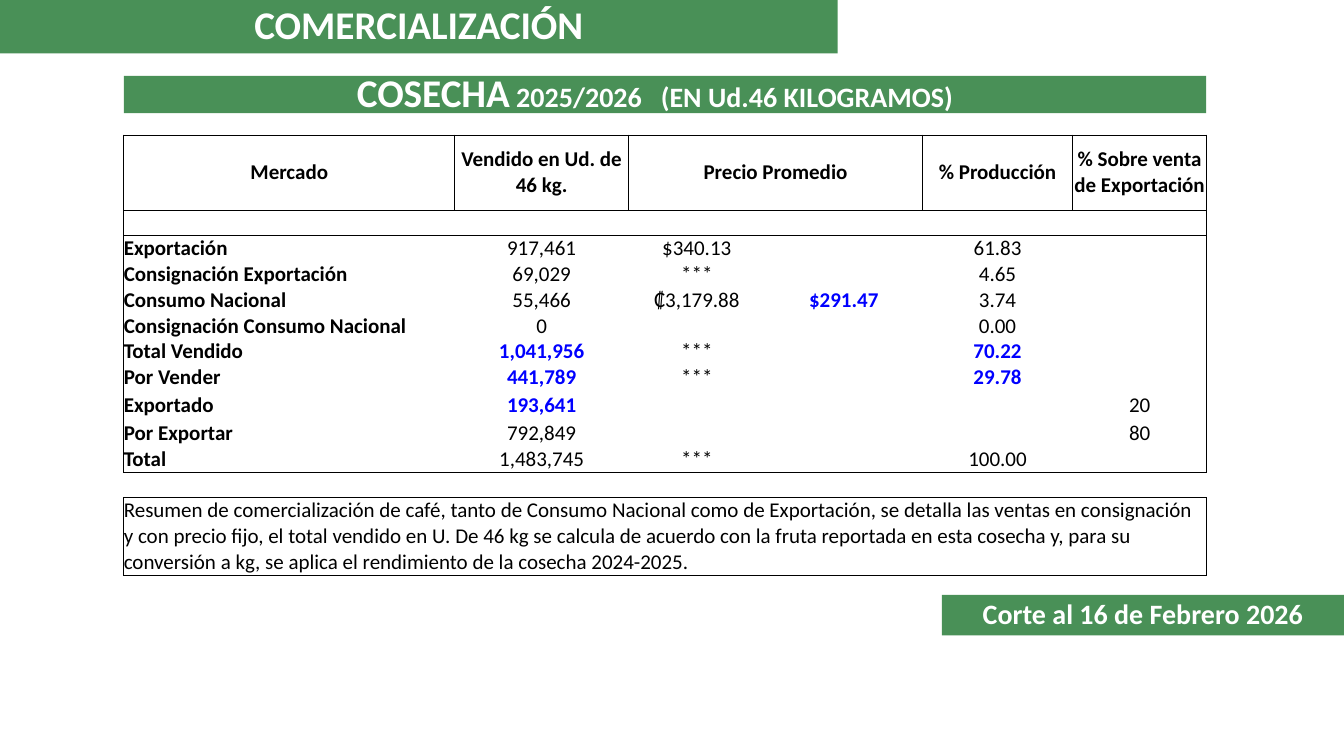
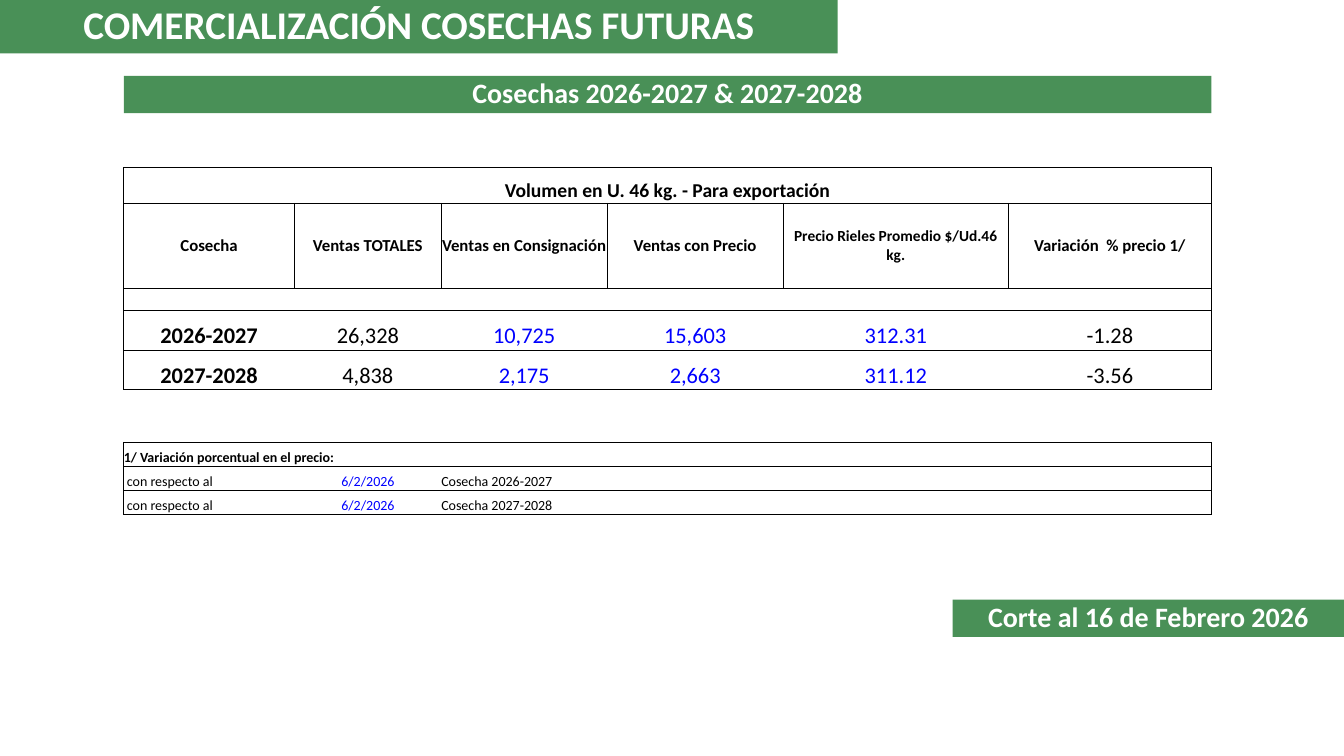
from lxml import etree
from pptx import Presentation
from pptx.dml.color import RGBColor
from pptx.enum.shapes import MSO_SHAPE
from pptx.enum.text import MSO_ANCHOR, PP_ALIGN
from pptx.oxml.ns import qn
from pptx.util import Cm, Pt

RECT = MSO_SHAPE.RECTANGLE
CENTER, LEFT = PP_ALIGN.CENTER, PP_ALIGN.LEFT
TOP, MIDDLE, BOTTOM = MSO_ANCHOR.TOP, MSO_ANCHOR.MIDDLE, MSO_ANCHOR.BOTTOM
FONT = "Calibri"
GREEN, WHITE, BLACK, BLUE = "499057", "FFFFFF", "000000", "0000FF"
SLIDE_W, SLIDE_H = 33.87, 19.05
MARGIN = 3.12
NO_GRID = "{2D5ABB26-0587-4C30-8999-92F81FD0307C}"


def rgb(value):
    return RGBColor.from_string(value)


def add_text(p, text, size=15, color=BLACK, bold=False, align=CENTER, spacing=None):
    p.alignment = align
    if spacing:
        p.line_spacing = spacing
    r = p.add_run()
    r.text = text
    r.font.name = FONT
    r.font.size = Pt(size)
    r.font.bold = bold
    r.font.color.rgb = rgb(color)


def box_sides(cell, row, col, box):
    top, left, bottom, right = box
    if not (top <= row <= bottom and left <= col <= right):
        return ""
    last = col + (cell.span_width if cell.is_merge_origin else 1) - 1
    edges = {"L": col == left, "R": last == right, "T": row == top, "B": row == bottom}
    return "".join(side for side, on in edges.items() if on)


def draw_borders(cell, sides):
    tc_pr = cell._tc.get_or_add_tcPr()
    for side in "LRTB":
        if side in sides:
            ln = etree.SubElement(tc_pr, qn("a:ln" + side), w=str(Pt(0.5)))
            fill = etree.SubElement(ln, qn("a:solidFill"))
            etree.SubElement(fill, qn("a:srgbClr"), val=BLACK)


class Deck:
    def __init__(self):
        self.prs = Presentation()
        self.prs.slide_width, self.prs.slide_height = Cm(SLIDE_W), Cm(SLIDE_H)
        self.s = None

    def slide(self, title):
        self.s = self.prs.slides.add_slide(self.prs.slide_layouts[6])
        self.band(0, 0, 21.11, 1.35, [(title, 28)])

    def band(self, left, top, width, height, runs, right_inset=0.25):
        sp = self.s.shapes.add_shape(RECT, Cm(left), Cm(top), Cm(width), Cm(height))
        sp.shadow.inherit = False
        sp.fill.solid()
        sp.fill.fore_color.rgb = rgb(GREEN)
        sp.line.fill.background()
        tf = sp.text_frame
        tf.word_wrap = True
        tf.vertical_anchor = MIDDLE
        tf.margin_right = Cm(right_inset)
        for text, size in runs:
            add_text(tf.paragraphs[0], text, size, WHITE, True, spacing=0.9)

    def heading(self, width, runs, right_inset=0.25):
        self.band(MARGIN, 1.91, width, 0.94, runs, right_inset)

    def cutoff(self, top, width, height):
        self.band(SLIDE_W - width, top, width, height, [("Corte al 16 de Febrero 2026", 20)])

    def table(self, top, widths, heights, rows, spans, boxes, style):
        frame = self.s.shapes.add_table(len(heights), len(widths), Cm(MARGIN), Cm(top),
                                        Cm(sum(widths)), Cm(sum(heights)))
        tbl = frame.table
        tbl._tbl.tblPr.find(qn("a:tableStyleId")).text = NO_GRID
        tbl.first_row = tbl.horz_banding = False
        for column, width in zip(tbl.columns, widths):
            column.width = Cm(width)
        for row, height in zip(tbl.rows, heights):
            row.height = Cm(height)
        for row, first, last in spans:
            tbl.cell(row, first).merge(tbl.cell(row, last))
        for row in range(len(heights)):
            texts = rows.get(row, [])
            for col in range(len(widths)):
                cell = tbl.cell(row, col)
                draw_borders(cell, "".join(box_sides(cell, row, col, box) for box in boxes))
                cell.fill.background()
                self.fill_cell(cell, texts[col] if col < len(texts) else "", **style(row, col))

    def fill_cell(self, cell, text, anchor=BOTTOM, indent=0, **fmt):
        cell.margin_left = Cm(indent)
        cell.margin_right = cell.margin_top = cell.margin_bottom = 0
        cell.vertical_anchor = anchor
        p = cell.text_frame.paragraphs[0]
        if text:
            add_text(p, text, **fmt)
        else:
            etree.SubElement(p._p, qn("a:endParaRPr"), sz="800")


def market_style(row, col):
    if row == 0:
        return dict(bold=True, anchor=MIDDLE)
    if row == 12:
        return dict(align=LEFT, anchor=TOP)
    if col == 0:
        return dict(bold=True, align=LEFT)
    if (row, col) in {(4, 3), (6, 1), (7, 1), (8, 1), (6, 4), (7, 4)}:
        return dict(bold=True, color=BLUE)
    return {}


def future_style(row, col):
    if row == 0:
        return dict(size=14, bold=True)
    if row == 1:
        return dict(size=11 if col == 4 else 12, bold=True, anchor=MIDDLE)
    if row < 7:
        return dict(size=16, bold=col == 0, color=BLUE if col in (2, 3, 4) else BLACK)
    if row == 7:
        return dict(size=10, bold=True, align=LEFT)
    if col == 1:
        return dict(size=10, color=BLUE)
    return dict(size=10, align=LEFT, indent=0.08 if col == 0 else 0)


def market_slide(deck):
    deck.slide("COMERCIALIZACIÓN")
    deck.heading(27.28, [("COSECHA", 28), (" 2025/2026   (EN Ud.46 KILOGRAMOS)", 20)], 0.75)
    deck.cutoff(14.99, 10.13, 1.02)
    rows = {
        0: ["Mercado", "Vendido en Ud. de 46 kg.", "Precio Promedio", "", "% Producción",
            "% Sobre venta de Exportación"],
        2: ["Exportación", "917,461", "$340.13", "", "61.83"],
        3: ["Consignación Exportación", "69,029", "***", "", "4.65"],
        4: ["Consumo Nacional", "55,466", "₡3,179.88", "$291.47", "3.74"],
        5: ["Consignación Consumo Nacional", "0", "", "", "0.00"],
        6: ["Total Vendido", "1,041,956", "***", "", "70.22"],
        7: ["Por Vender", "441,789", "***", "", "29.78"],
        8: ["Exportado", "193,641", "", "", "", "20"],
        9: ["Por Exportar", "792,849", "", "", "", "80"],
        10: ["Total", "1,483,745", "***", "", "100.00"],
        12: ["Resumen de comercialización de café, tanto de Consumo Nacional como de "
             "Exportación, se detalla las ventas en consignación y con precio fijo, el total "
             "vendido en U. De 46 kg se calcula de acuerdo con la fruta reportada en esta "
             "cosecha y, para su conversión a kg, se aplica el rendimiento de la cosecha "
             "2024-2025."],
    }
    header = [(0, first, 0, last) for first, last in [(0, 0), (1, 1), (2, 3), (4, 4), (5, 5)]]
    deck.table(3.4, [8.34, 4.38, 3.44, 3.97, 3.78, 3.38],
               [1.9] + [0.64] * 7 + [0.71] * 2 + [0.64] * 2 + [1.94],
               rows, [(0, 2, 3), (12, 0, 5)],
               header + [(1, 0, 10, 5), (12, 0, 12, 5)], market_style)


def future_slide(deck):
    deck.slide("COMERCIALIZACIÓN COSECHAS FUTURAS")
    deck.heading(27.41, [("Cosechas 2026-2027 & 2027-2028", 20)])
    deck.cutoff(15.11, 9.86, 0.94)
    rows = {
        0: ["Volumen en U. 46 kg. - Para exportación"],
        1: ["Cosecha", "Ventas TOTALES", "Ventas en Consignación", "Ventas con Precio",
            "Precio Rieles Promedio $/Ud.46 kg.", "Variación  % precio 1/"],
        3: ["2026-2027", "26,328", "10,725", "15,603", "312.31", "-1.28"],
        4: ["2027-2028", "4,838", "2,175", "2,663", "311.12", "-3.56"],
        7: ["1/ Variación porcentual en el precio:"],
        8: ["con respecto al", "6/2/2026", "Cosecha 2026-2027"],
        9: ["con respecto al", "6/2/2026", "Cosecha 2027-2028"],
    }
    header = [(1, col, 1, col) for col in range(6)]
    bands = [(first, 0, last, 5) for first, last in [(0, 0), (2, 3), (4, 4), (7, 8), (9, 9)]]
    deck.table(4.22, [4.3, 3.7, 4.18, 4.44, 5.67, 5.12],
               [0.9, 2.14, 0.56, 1, 1, 0.64, 0.68, 0.61, 0.61, 0.61],
               rows, [(0, 0, 5), (7, 0, 2)], header + bands, future_style)


def main():
    deck = Deck()
    market_slide(deck)
    future_slide(deck)
    deck.prs.save("out.pptx")


if __name__ == "__main__":
    main()
